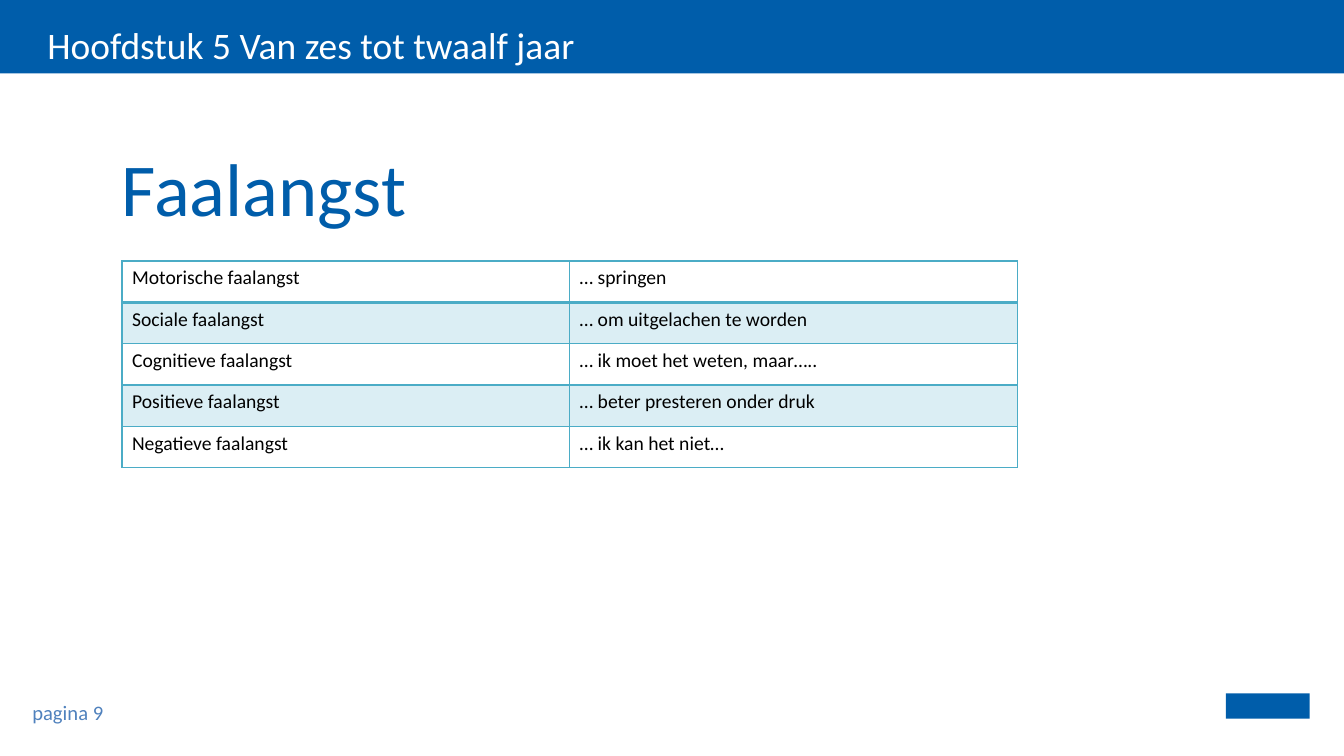
"""Build the slide on types of fear of failure."""
import pptx
import pptx.dml.color
import pptx.enum.shapes
import pptx.enum.text
import pptx.oxml
import pptx.oxml.ns
import pptx.util
from pptx.util import Inches

BLUE = "005DAA"
TEAL = "4BACC6"


def color(value):
    return pptx.dml.color.RGBColor.from_string(value)


def write(para, text, size, value):
    span = para.add_run()
    span.text = text
    for name, setting in {"name": "Calibri", "size": pptx.util.Pt(size), "bold": False}.items():
        setattr(span.font, name, setting)
    span.font.color.rgb = color(value)


deck = pptx.Presentation()
deck.slide_width = Inches(13.33)
deck.slide_height = Inches(7.5)
page = deck.slides.add_slide(deck.slide_layouts[6])

header_bar = (0, 0, 13.33, 0.73)
logo_block = (12.16, 6.88, 0.83, 0.25)
for place in (header_bar, logo_block):
    block = page.shapes.add_shape(
        pptx.enum.shapes.MSO_SHAPE.RECTANGLE, *[Inches(length) for length in place])
    block.shadow.inherit = False
    block.fill.solid()
    block.fill.fore_color.rgb = color(BLUE)
    block.line.fill.background()

TOP = pptx.enum.text.MSO_ANCHOR.TOP
MIDDLE = pptx.enum.text.MSO_ANCHOR.MIDDLE
texts = [
    ("pagina 9", (0.32, 6.87, 1.42, 0.4), 14.7, "4F81BD", MIDDLE, 1.0),
    ("Hoofdstuk 5 Van zes tot twaalf jaar", (0.47, 0.18, 5.8, 0.52), 26.7, "FFFFFF", TOP, 1.08),
    ("Faalangst", (1.21, 1.34, 11.34, 0.84), 53.3, BLUE, TOP, 1.08),
]
for text, place, size, value, anchor, spacing in texts:
    box = page.shapes.add_textbox(*[Inches(length) for length in place])
    frame_format = {
        "margin_left": 0, "margin_top": 0, "margin_right": 0, "margin_bottom": 0,
        "word_wrap": True, "vertical_anchor": anchor,
    }
    for name, setting in frame_format.items():
        setattr(box.text_frame, name, setting)
    para = box.text_frame.paragraphs[0]
    para.line_spacing = spacing
    write(para, text, size, value)

rows = [
    ("Motorische faalangst", "… springen"),
    ("Sociale faalangst", "… om uitgelachen te worden"),
    ("Cognitieve faalangst", "… ik moet het weten, maar…..",),
    ("Positieve faalangst", "… beter presteren onder druk"),
    ("Negatieve faalangst", "… ik kan het niet…"),
]
row_height = 0.41
column_width = 4.44
table = page.shapes.add_table(
    len(rows), 2, Inches(1.21), Inches(2.59),
    Inches(2 * column_width), Inches(len(rows) * row_height)).table
table.first_row = False
table.horz_banding = False
for column in table.columns:
    column.width = Inches(column_width)

for row_number, row in enumerate(rows):
    table.rows[row_number].height = Inches(row_height)
    widths = {
        "lnL": 1, "lnR": 1,
        "lnT": 2 if row_number == 1 else 1,
        "lnB": 2 if row_number == 0 else 1,
    }
    for column_number, text in enumerate(row):
        cell = table.cell(row_number, column_number)
        write(cell.text_frame.paragraphs[0], text, 14, "000000")
        properties = cell._tc.get_or_add_tcPr()
        for side, width in widths.items():
            properties.append(pptx.oxml.parse_xml(
                f'<a:{side} {pptx.oxml.ns.nsdecls("a")} w="{pptx.util.Pt(width)}">'
                f'<a:solidFill><a:srgbClr val="{TEAL}"/></a:solidFill></a:{side}>'))
        if row_number % 2:
            cell.fill.solid()
            cell.fill.fore_color.rgb = color("DBEEF4")
        else:
            cell.fill.background()

deck.save("out.pptx")
